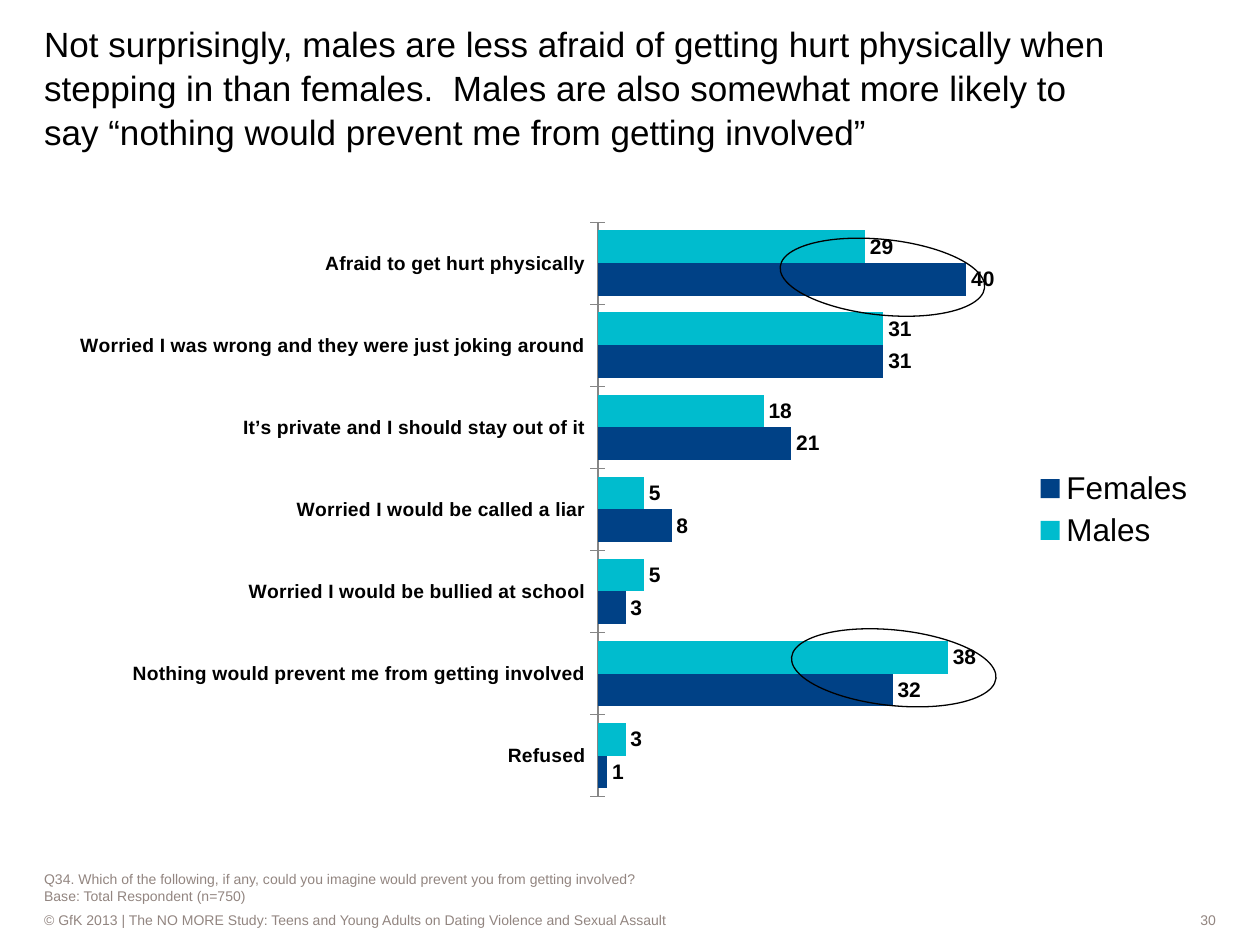
from lxml.etree import SubElement
from pptx import Presentation
from pptx.chart.data import CategoryChartData
from pptx.dml.color import RGBColor
from pptx.enum.chart import XL_CHART_TYPE, XL_LABEL_POSITION, XL_LEGEND_POSITION, XL_TICK_MARK
from pptx.enum.shapes import MSO_SHAPE
from pptx.enum.text import MSO_ANCHOR, MSO_AUTO_SIZE, PP_ALIGN
from pptx.oxml import parse_xml
from pptx.oxml.ns import nsdecls, qn
from pptx.util import Pt

TITLE = ("Not surprisingly, males are less afraid of getting hurt physically when stepping in "
         "than females.  Males are also somewhat more likely to say “nothing would prevent me "
         "from getting involved”")
NOTES = ["Q34. Which of the following, if any, could you imagine would prevent you from getting involved?",
         "Base: Total Respondent (n=750)"]
COPYRIGHT = "© GfK 2013 | The NO MORE Study: Teens and Young Adults on Dating Violence and Sexual Assault"
PAGE_NUMBER = "30"

ANSWERS = [  # reason, males, females
    ("Afraid to get hurt physically", 29, 40),
    ("Worried I was wrong and they were just joking around", 31, 31),
    ("It’s private and I should stay out of it", 18, 21),
    ("Worried I would be called a liar", 5, 8),
    ("Worried I would be bullied at school", 5, 3),
    ("Nothing would prevent me from getting involved", 38, 32),
    ("Refused", 3, 1),
]
SERIES_COLORS = {"Males": "00BCCE", "Females": "004186"}
HIGHLIGHTS = [(445.5, 136.8), (452, 360)]  # left, top of each ellipse
PLOT_AREA = {"x": 0.47, "y": 0.02, "w": 0.36, "h": 0.96}  # shares of the chart frame
MARGIN = 25.2
BLACK, GREY, WHITE = "000000", "928580", "FFFFFF"


def color(hex_string):
    return RGBColor.from_string(hex_string)


def style_font(font, size, bold=False, ink=BLACK):
    font.name, font.size, font.bold = "Arial", Pt(size), bold
    font.color.rgb = color(ink)


def write(box, text, size=8, ink=GREY, anchor=MSO_ANCHOR.MIDDLE, align=PP_ALIGN.LEFT,
          spacing=1.0, bottom=0):
    """Fill a shape with one unbulleted paragraph per line of text."""
    frame = box.text_frame
    frame.text = text
    frame.word_wrap, frame.auto_size = True, MSO_AUTO_SIZE.NONE
    frame.vertical_anchor = anchor
    frame.margin_left = frame.margin_top = frame.margin_right = 0
    frame.margin_bottom = Pt(bottom)
    for para in frame.paragraphs:
        properties = para._p.get_or_add_pPr()
        properties.set("marL", "0")
        properties.set("indent", "0")
        SubElement(properties, qn("a:buNone"))
        para.alignment, para.line_spacing = align, spacing
        para.space_before = para.space_after = Pt(0)
        for span in para.runs:
            style_font(span.font, size, ink=ink)


def place(box, left, top, width, height):
    box.left, box.top, box.width, box.height = Pt(left), Pt(top), Pt(width), Pt(height)


def add_footer_box(page, left, width, text, align):
    box = page.shapes.add_shape(MSO_SHAPE.RECTANGLE, Pt(left), Pt(519.8), Pt(width), Pt(11.5))
    box.shadow.inherit = False
    box.fill.solid()
    box.fill.fore_color.rgb = color(WHITE)
    box.line.fill.background()
    write(box, text, align=align)


def add_answer_chart(page):
    reasons, males, females = zip(*ANSWERS)
    data = CategoryChartData(number_format="0")
    data.categories = reasons
    data.add_series("Males", males)
    data.add_series("Females", females)
    chart = page.shapes.add_chart(XL_CHART_TYPE.BAR_CLUSTERED, Pt(32.4), Pt(120.2),
                                  Pt(658), Pt(342), data).chart
    style_font(chart.font, 18)
    chart.has_title = False
    chart.has_legend = True
    chart.legend.position = XL_LEGEND_POSITION.RIGHT
    chart.legend.include_in_layout = False

    reason_axis, value_axis = chart.category_axis, chart.value_axis
    reason_axis.reverse_order = True
    reason_axis.major_tick_mark = XL_TICK_MARK.CROSS
    reason_axis.format.line.color.rgb = color("868686")
    style_font(reason_axis.tick_labels.font, 11, bold=True)
    value_axis.visible = value_axis.has_major_gridlines = False
    value_axis.minimum_scale, value_axis.maximum_scale = 0, 45

    plot = chart.plots[0]
    plot.gap_width, plot.overlap, plot.vary_by_categories = 50, 0, False
    for series in plot.series:
        series.format.fill.solid()
        series.format.fill.fore_color.rgb = color(SERIES_COLORS[series.name])
        labels = series.data_labels
        labels.show_value = True
        labels.position = XL_LABEL_POSITION.OUTSIDE_END
        labels.number_format, labels.number_format_is_linked = "0", False
        style_font(labels.font, 12, bold=True)

    shares = "".join(f'<c:{key} val="{share}"/>' for key, share in PLOT_AREA.items())
    layout = parse_xml(f'<c:layout {nsdecls("c")}><c:manualLayout><c:layoutTarget val="inner"/>'
                       f'<c:xMode val="edge"/><c:yMode val="edge"/>{shares}'
                       '</c:manualLayout></c:layout>')
    plot_area = chart._chartSpace.chart.plotArea
    for automatic in plot_area.findall(qn("c:layout")):
        plot_area.remove(automatic)
    plot_area.insert(0, layout)


def add_highlight(page, left, top):
    ellipse = page.shapes.add_shape(MSO_SHAPE.OVAL, Pt(left), Pt(top), Pt(117.4), Pt(43.2))
    ellipse.rotation = 185.9
    ellipse.shadow.inherit = False
    ellipse.fill.background()
    ellipse.line.color.rgb = color(BLACK)
    ellipse.line.width = Pt(0.75)


def main():
    deck = Presentation()
    deck.slide_width, deck.slide_height = Pt(720), Pt(540)
    page = deck.slides.add_slide(deck.slide_layouts[1])
    title, notes = page.placeholders

    place(title, MARGIN, 18, 610.6, 69.1)
    write(title, TITLE, size=20, ink=BLACK, anchor=MSO_ANCHOR.BOTTOM, spacing=1.05)
    place(notes, MARGIN, 497.5, 669, 22.3)
    write(notes, "\n".join(NOTES), anchor=MSO_ANCHOR.BOTTOM, spacing=1.05, bottom=2.9)
    add_footer_box(page, MARGIN, 555.8, COPYRIGHT, PP_ALIGN.LEFT)
    add_footer_box(page, 592.6, 102.2, PAGE_NUMBER, PP_ALIGN.RIGHT)

    add_answer_chart(page)
    for left, top in HIGHLIGHTS:
        add_highlight(page, left, top)
    deck.save("out.pptx")


if __name__ == "__main__":
    main()
